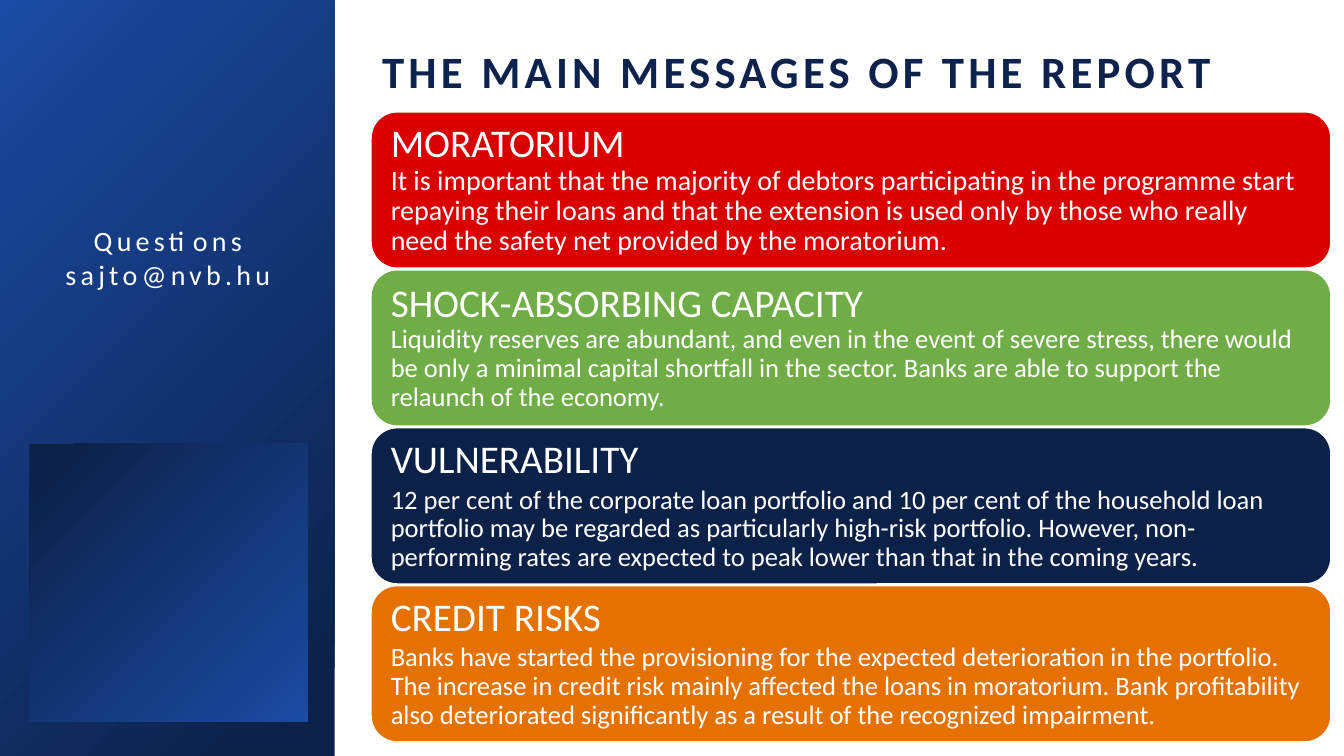
"""Build the slide with the main messages of the report."""
from pptx import Presentation
from pptx.dml.color import RGBColor
from pptx.enum import shapes, text
from pptx.util import Inches, Pt

COLOURS = {"white": "FFFFFF", "title": "0D234D", "navy": "0C2148", "blue": "1B4BA3",
           "red": "DA0000", "green": "70AD47", "orange": "E57200"}
FONT = "Calibri"
TITLE = "THE MAIN MESSAGES OF THE REPORT"
CONTACT = ["Questions", "sajto@nvb.hu"]
PANELS = [(-0.01, 0, 3.33, 7.5, 0), (0.29, 4.4, 2.76, 2.76, 180)]
MESSAGES = [
    ("MORATORIUM", "red", 20, True,
     "It is important that the majority of debtors participating in the programme start "
     "repaying their loans and that the extension is used only by those who really need "
     "the safety net provided by the moratorium."),
    ("SHOCK-ABSORBING CAPACITY", "green", 19, True,
     "Liquidity reserves are abundant, and even in the event of severe stress, there would "
     "be only a minimal capital shortfall in the sector. Banks are able to support the "
     "relaunch of the economy."),
    ("VULNERABILITY", "navy", 19, False,
     "12 per cent of the corporate loan portfolio and 10 per cent of the household loan "
     "portfolio may be regarded as particularly high-risk portfolio. However, non-performing "
     "rates are expected to peak lower than that in the coming years."),
    ("CREDIT RISKS", "orange", 19, False,
     "Banks have started the provisioning for the expected deterioration in the portfolio. "
     "The increase in credit risk mainly affected the loans in moratorium. Bank profitability "
     "also deteriorated significantly as a result of the recognized impairment."),
]
CARD_LEFT, CARD_WIDTH, CARD_HEIGHT = 3.68, 9.52, 1.55
FIRST_TOP, LAST_TOP = 1.11, 5.81


def colour(name):
    return RGBColor.from_string(COLOURS[name])


def set_insets(frame, across, down):
    frame.word_wrap = True
    frame.margin_left = frame.margin_right = Inches(across)
    frame.margin_top = frame.margin_bottom = Inches(down)


def style(para, size, name="white", bold=False):
    para.font.name = FONT
    para.font.size = Pt(size)
    para.font.bold = bold
    para.font.color.rgb = colour(name)


def add_span(para, words, size=None, spacing=None):
    span = para.add_run()
    span.text = words
    if size:
        span.font.size = Pt(size)
    if spacing:
        span._r.get_or_add_rPr().set("spc", str(spacing * 100))


def add_panel(page, left, top, width, height, rotation):
    panel = page.shapes.add_shape(shapes.MSO_SHAPE.RECTANGLE, Inches(left), Inches(top),
                                  Inches(width), Inches(height))
    panel.shadow.inherit = False
    panel.rotation = rotation
    panel.line.fill.background()
    panel.fill.gradient()
    panel.fill.gradient_angle = 135
    for stop, (position, name) in zip(panel.fill.gradient_stops, [(0.06, "navy"), (1, "blue")]):
        stop.position = position
        stop.color.rgb = colour(name)


def add_label(page, place, lines, size, name, bold):
    box = page.shapes.add_textbox(*map(Inches, place))
    frame = box.text_frame
    for index, words in enumerate(lines):
        para = frame.paragraphs[0] if index == 0 else frame.add_paragraph()
        add_span(para, words, spacing=3)
        style(para, size, name, bold)
    return frame


def add_card(page, top, heading, fill, size, same_paragraph, body):
    card = page.shapes.add_shape(shapes.MSO_SHAPE.ROUNDED_RECTANGLE, Inches(CARD_LEFT),
                                 Inches(top), Inches(CARD_WIDTH), Inches(CARD_HEIGHT))
    card.shadow.inherit = False
    card.fill.solid()
    card.fill.fore_color.rgb = colour(fill)
    card.line.color.rgb = colour("white")
    card.line.width = Pt(1)
    frame = card.text_frame
    set_insets(frame, 0.12, 0.12)
    frame.vertical_anchor = text.MSO_ANCHOR.MIDDLE
    para = frame.paragraphs[0]
    add_span(para, heading, 28)
    if same_paragraph:
        para.add_line_break()
    else:
        para = frame.add_paragraph()
    add_span(para, body, size)
    for para in frame.paragraphs:
        para.alignment = text.PP_ALIGN.LEFT
        para.line_spacing = 0.9
        para.space_after = Pt(3)
        style(para, size)


def main():
    deck = Presentation()
    deck.slide_width, deck.slide_height = Inches(13.33), Inches(7.5)
    page = deck.slides.add_slide(deck.slide_layouts[6])
    for panel in PANELS:
        add_panel(page, *panel)
    contact = add_label(page, (0.4, 2.17, 2.53, 0.77), CONTACT, 20, "white", False)
    contact.word_wrap = True
    for para in contact.paragraphs:
        para.alignment = text.PP_ALIGN.CENTER
    title = add_label(page, (3.71, 0.34, 9.18, 0.78), [TITLE], 32, "title", True)
    set_insets(title, 0.08, 0.04)
    title.vertical_anchor = text.MSO_ANCHOR.MIDDLE
    title.paragraphs[0].line_spacing = 0.9
    pitch = (LAST_TOP - FIRST_TOP) / (len(MESSAGES) - 1)
    for index, message in enumerate(MESSAGES):
        add_card(page, FIRST_TOP + index * pitch, *message)
    deck.save("out.pptx")


if __name__ == "__main__":
    main()
